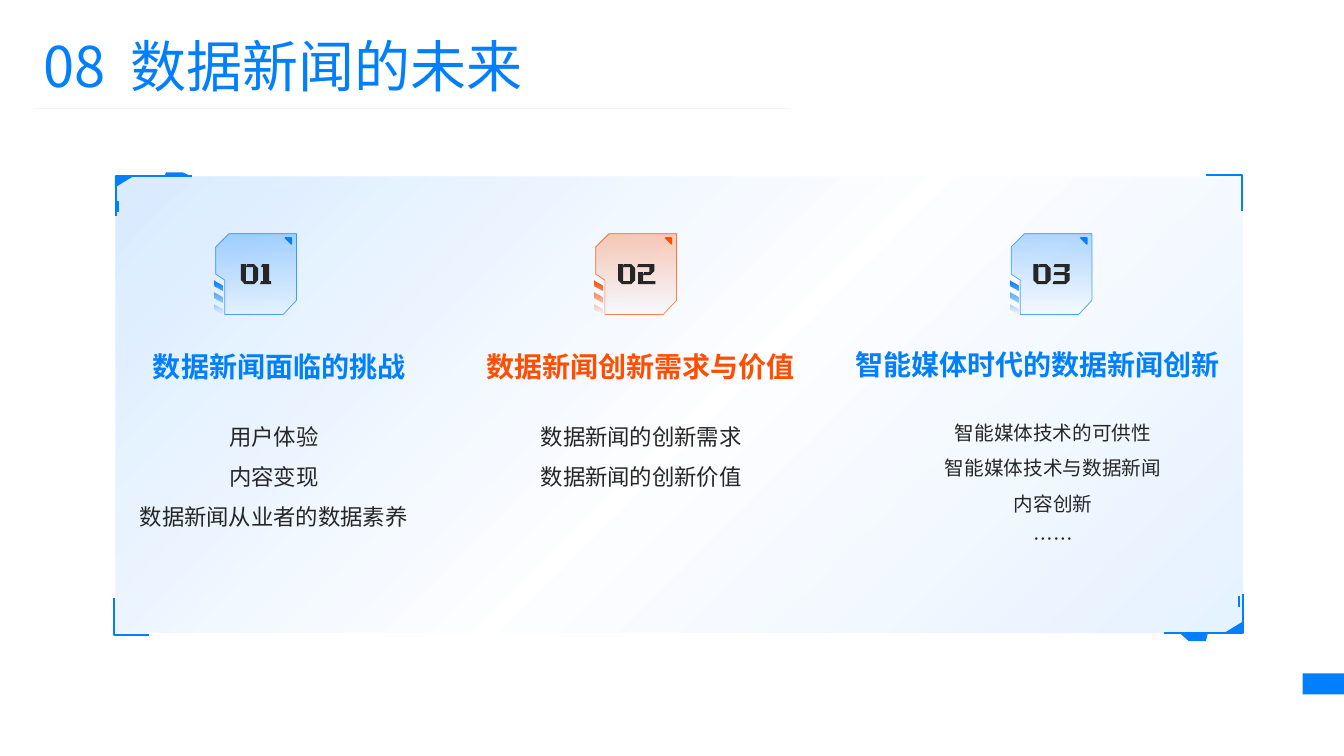
from lxml import etree
from pptx import Presentation
from pptx.dml.color import RGBColor
from pptx.enum.shapes import MSO_CONNECTOR, MSO_SHAPE
from pptx.enum.text import MSO_ANCHOR, PP_ALIGN
from pptx.oxml.ns import qn
from pptx.util import Inches, Pt

STRAIGHT = MSO_CONNECTOR.STRAIGHT
RECTANGLE, TRIANGLE = MSO_SHAPE.RECTANGLE, MSO_SHAPE.ISOSCELES_TRIANGLE
TOP, BOTTOM = MSO_ANCHOR.TOP, MSO_ANCHOR.BOTTOM
LEFT, CENTER = PP_ALIGN.LEFT, PP_ALIGN.CENTER
FONT = "Noto Sans CJK SC"
COLORS = {"blue": "027FFD", "orange": "FF4E01", "ink": "262626", "rule": "F2F2F2"}

ZERO = [(0, 0), (.05, 0), (.05, .17), (.12, .17), (.12, .03), (.05, .03), (.06, 0),
        (.13, 0), (.17, .04), (.17, .16), (.13, .2), (.04, .2), (0, .16)]
DIGITS = {
    "1": [[(.21, 0), (.28, 0), (.28, .17), (.3, .17), (.3, .2), (.19, .2),
           (.2, .17), (.22, .17), (.22, .03), (.2, .03)]],
    "2": [[(.2, .08), (.25, .08), (.25, .17), (.37, .17), (.37, .2), (.2, .2)],
          [(.2, 0), (.36, 0), (.36, .07), (.32, .11), (.25, .11), (.26, .08),
           (.31, .08), (.31, .03), (.19, .03)]],
    "3": [[(.21, 0), (.36, 0), (.36, .06), (.32, .09), (.36, .09), (.36, .16),
           (.32, .2), (.19, .2), (.2, .17), (.31, .17), (.31, .11), (.2, .11),
           (.21, .08), (.31, .08), (.31, .03), (.2, .03)]],
}
BADGE = [(.13, 0), (.8, 0), (.8, .66), (.67, .8), (.09, .8), (.09, .46), (0, .4), (0, .13)]
STRIPES = [[(0, y), (.08, y + .05), (.08, y + .11), (0, y + .06)] for y in (0, .115, .23)]

COLUMNS = [
    {"digit": "1", "color": "blue", "badge": 2.14, "digits": .25, "size": 16,
     "title": "数据新闻面临的挑战", "title_box": (1.28, 3.43, 2.98, .37),
     "items": ["用户体验", "内容变现", "数据新闻从业者的数据素养"],
     "items_box": (1.32, 4.06, 2.79, 1.79)},
    {"digit": "2", "color": "orange", "badge": 5.91, "digits": .22, "size": 16,
     "title": "数据新闻创新需求与价值", "title_box": (4.26, 3.43, 4.19, .37),
     "items": ["数据新闻的创新需求", "数据新闻的创新价值"],
     "items_box": (5.05, 4.06, 2.62, 1.79)},
    {"digit": "3", "color": "blue", "badge": 10.03, "digits": .22, "size": 14,
     "title": "智能媒体时代的数据新闻创新", "title_box": (8.27, 3.41, 4.04, .37),
     "items": ["智能媒体技术的可供性", "智能媒体技术与数据新闻", "内容创新", "……"],
     "items_box": (8.63, 4.06, 3.63, 1.55)},
]


def rgb(color):
    """Return the named colour."""
    return RGBColor.from_string(COLORS[color])


def set_alpha(parent, percent):
    """Give the first colour found under an element an opacity."""
    color = next(parent.iter(qn("a:srgbClr")))
    etree.SubElement(color, qn("a:alpha")).set("val", str(percent * 1000))


def paint(shape, fill=None, line=None, width=1):
    """Set a plain fill and outline, without shadow."""
    shape.shadow.inherit = False
    if fill:
        shape.fill.solid()
        shape.fill.fore_color.rgb = rgb(fill)
    else:
        shape.fill.background()
    if line:
        shape.line.color.rgb = rgb(line)
        shape.line.width = Pt(width)
    else:
        shape.line.fill.background()


def fade(shape, color, stops, angle):
    """Fill a shape with one colour in changing opacity, as (position, percent)."""
    gradient = etree.Element(qn("a:gradFill"), rotWithShape="1")
    stop_list = etree.SubElement(gradient, qn("a:gsLst"))
    for position, percent in stops:
        stop = etree.SubElement(stop_list, qn("a:gs"), pos=str(position * 1000))
        etree.SubElement(stop, qn("a:srgbClr"), val=COLORS[color])
        set_alpha(stop, percent)
    etree.SubElement(gradient, qn("a:lin"), ang=str(angle * 60000), scaled="0")
    properties = shape._element.spPr
    properties.replace(properties.find(qn("a:noFill")), gradient)


def add_outline(page, left, top, contours, closed=True):
    """Draw contours whose points are measured from left and top."""
    builder = None
    for contour in contours:
        points = [(Inches(left + x), Inches(top + y)) for x, y in contour]
        if builder is None:
            builder = page.shapes.build_freeform(*points[0], scale=1.0)
        else:
            builder.move_to(*points[0])
        builder.add_line_segments(points[1:], close=closed)
    return builder.convert_to_shape()


def add_line(page, start, end, color, width):
    """Draw a straight line between two points."""
    line = page.shapes.add_connector(STRAIGHT, *map(Inches, start + end))
    line.line.color.rgb = rgb(color)
    line.line.width = Pt(width)
    etree.SubElement(line._element.spPr, qn("a:effectLst"))


def add_text(page, box, lines, size, color, bold=False, align=CENTER,
             anchor=TOP, spacing=1.0, inset=(0, 0)):
    """Write one paragraph per line; a line is a list of runs."""
    frame = page.shapes.add_textbox(*map(Inches, box)).text_frame
    frame.word_wrap = True
    frame.vertical_anchor = anchor
    frame.margin_left = frame.margin_right = Inches(inset[0])
    frame.margin_top = frame.margin_bottom = Inches(inset[1])
    for index, texts in enumerate(lines):
        para = frame.add_paragraph() if index else frame.paragraphs[0]
        para.alignment = align
        para.line_spacing = spacing
        para.font.size = Pt(size)
        para.font.bold = bold
        para.font.color.rgb = rgb(color)
        para.font.name = FONT
        defaults = para._p.pPr.find(qn("a:defRPr"))
        etree.SubElement(defaults, qn("a:ea"), typeface=FONT)
        for text in texts:
            para.add_run().text = text
    return frame


def add_header(page, box):
    """Write the slide title over a thin rule."""
    left, top, width, height = box
    frame = add_text(page, box, [["08", " ", "数据新闻的未来"]], 40, "blue",
                     align=LEFT, inset=(.1, .05))
    gap = frame.paragraphs[0].runs[1]
    gap._r.get_or_add_rPr().set("spc", "900")
    rule = top + height + .05
    add_line(page, (left + .02, rule), (left + width - .18, rule), "rule", .5)


def add_panel(page, box):
    """Draw the tinted panel with its four corner ornaments."""
    left, top, width, height = box
    right, bottom = left + width, top + height
    panel = page.shapes.add_shape(RECTANGLE, *map(Inches, box))
    paint(panel)
    fade(panel, "blue", [(0, 15), (52, 0), (100, 10)], 45)
    brackets = [
        (right, top, [(-.36, -.01), (0, -.01), (0, .34)]),
        (right, bottom, [(-.78, 0), (.01, 0), (.01, -.39)]),
        (left, top, [(.75, 0), (0, 0), (0, .39)]),
        (left, bottom, [(.33, .02), (-.02, .02), (-.02, -.35)]),
    ]
    for x, y, points in brackets:
        paint(add_outline(page, x, y, [points], closed=False), line="blue", width=1.5)
    ornaments = [
        (right, bottom, [(0, -.11), (0, 0), (-.18, 0)]),
        (right, bottom, [(-.53, .08), (-.62, 0), (-.34, 0), (-.36, .08)]),
        (left, top, [(-.01, .11), (-.01, 0), (.17, 0)]),
        (left, top, [(.66, -.04), (.75, 0), (.48, 0), (.5, -.04)]),
    ]
    for x, y, points in ornaments:
        paint(add_outline(page, x, y, [points]), fill="blue")
    for x, y in ((left + .02, top + .24), (right - .03, bottom - .37)):
        add_line(page, (x, y), (x, y + .11), "blue", 1)


def add_badge(page, left, top, column):
    """Draw a numbered badge with its corner mark and stripes."""
    color = column["color"]
    plate = add_outline(page, left, top, [BADGE])
    paint(plate, line=color, width=.5)
    set_alpha(plate._element.spPr.find(qn("a:ln")), 70)
    fade(plate, color, [(0, 0), (100, 30)], 270)
    mark = page.shapes.add_shape(TRIANGLE, Inches(left + .69), Inches(top + .04),
                                 Inches(.06), Inches(.06))
    mark.adjustments[0] = 1
    mark.rotation = 270
    paint(mark, fill=color, line=color)
    stripes = add_outline(page, left - .01, top + .46, STRIPES)
    paint(stripes)
    fade(stripes, color, [(0, 0), (100, 100)], 270)
    number = add_outline(page, left + column["digits"], top + .3,
                         [ZERO] + DIGITS[column["digit"]])
    paint(number, fill="ink")


def add_column(page, column, top):
    """Place a badge, heading and list of points."""
    add_badge(page, column["badge"], top, column)
    add_text(page, column["title_box"], [[column["title"]]], 20, column["color"],
             bold=True, anchor=BOTTOM)
    add_text(page, column["items_box"], [[item] for item in column["items"]],
             column["size"], "ink", spacing=1.5)


def main():
    """Build and save the slide."""
    deck = Presentation()
    deck.slide_width, deck.slide_height = Inches(13.33), Inches(7.5)
    page = deck.slides.add_slide(deck.slide_layouts[6])
    add_panel(page, (1.15, 1.75, 11.17, 4.53))
    for column in COLUMNS:
        add_column(page, column, 2.32)
    tab = page.shapes.add_shape(RECTANGLE, *map(Inches, (12.92, 6.68, .41, .21)))
    paint(tab, fill="blue")
    add_header(page, (.33, .26, 7.68, .77))
    deck.save("out.pptx")


if __name__ == "__main__":
    main()
